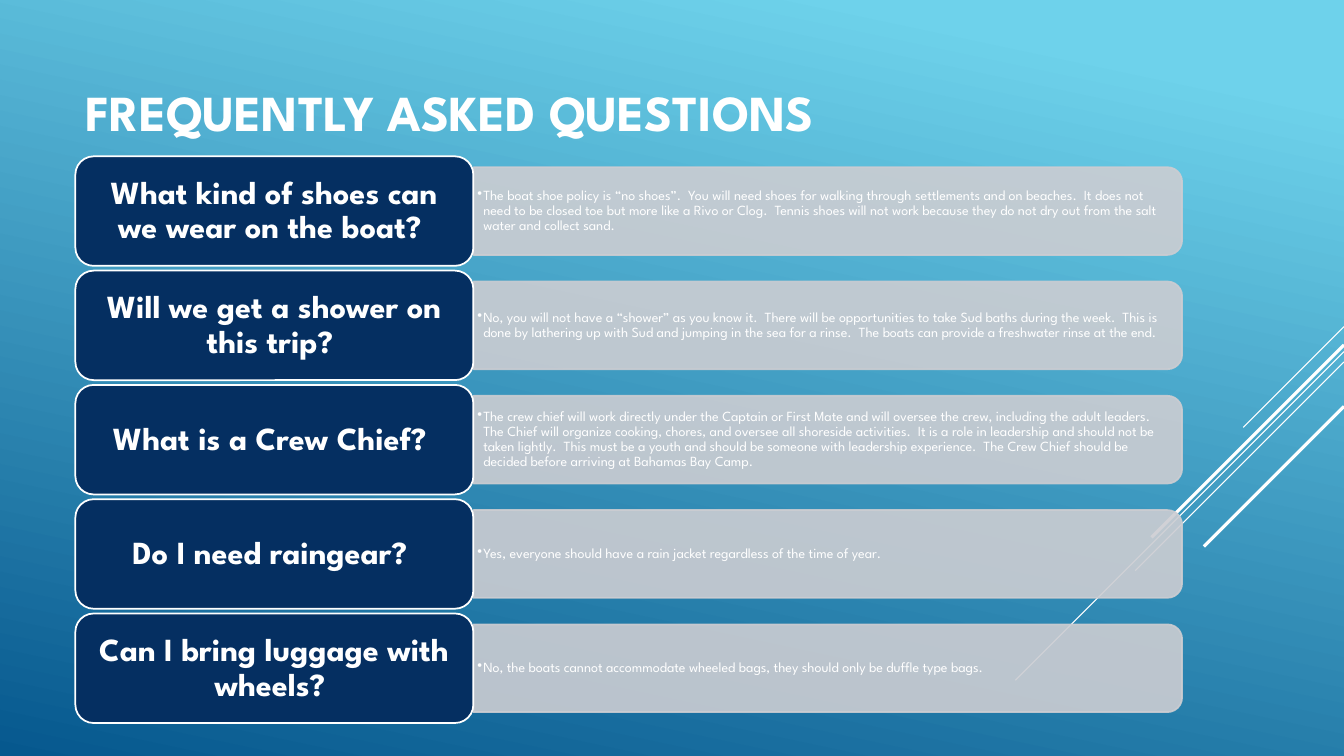
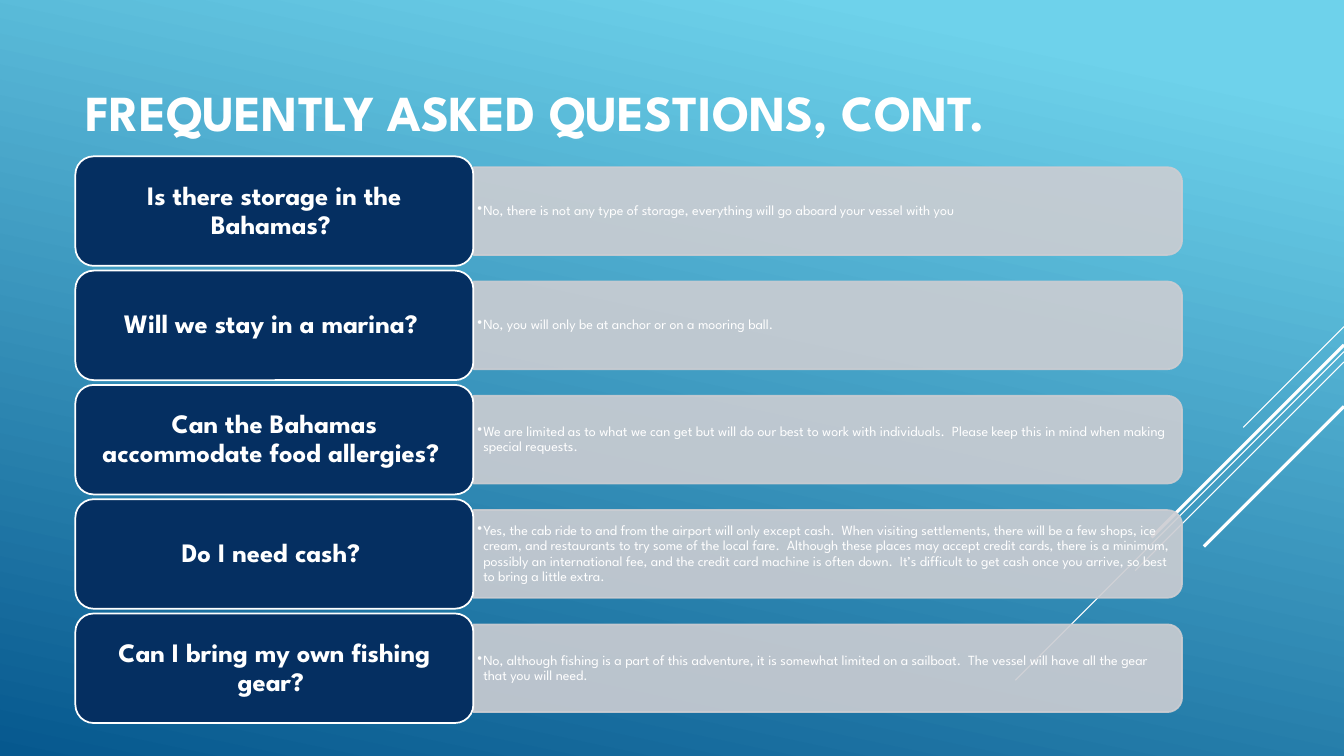
from pptx import Presentation
from pptx.dml.color import RGBColor
from pptx.enum.shapes import MSO_CONNECTOR, MSO_SHAPE
from pptx.enum.text import MSO_ANCHOR, MSO_AUTO_SIZE, PP_ALIGN
from pptx.oxml.ns import qn
from pptx.util import Cm, Pt
from lxml import etree

STRAIGHT = MSO_CONNECTOR.STRAIGHT
ROUNDED = MSO_SHAPE.ROUNDED_RECTANGLE
ROUNDED_TOP = MSO_SHAPE.ROUND_2_SAME_RECTANGLE
MIDDLE = MSO_ANCHOR.MIDDLE
NO_AUTOFIT = MSO_AUTO_SIZE.NONE
LEFT, CENTER = PP_ALIGN.LEFT, PP_ALIGN.CENTER

WHITE = RGBColor(0xFF, 0xFF, 0xFF)
NAVY = RGBColor(0x05, 0x2F, 0x61)
GRAY = RGBColor(0xCC, 0xCD, 0xD2)
SKY = RGBColor(0x6E, 0xD2, 0xEB)
OCEAN = RGBColor(0x06, 0x58, 0x8E)
FONT = "League Spartan"

# Sizes in centimetres
SLIDE_WIDTH, SLIDE_HEIGHT = 33.87, 19.05
MARGIN_LEFT = 1.9
TILE_WIDTH, TILE_HEIGHT = 10.03, 2.76
FIRST_ROW_MIDDLE, ROW_PITCH = 5.32, 2.88
PANEL_LEFT = MARGIN_LEFT + TILE_WIDTH
PANEL_WIDTH, PANEL_HEIGHT = 17.86, 2.21
ANSWER_WIDTH, ANSWER_HEIGHT = 17.75, 1.98

# Diagonals from the right edge: top, run (equal across and down), line width in points
DIAGONALS = [
    (8.23, 2.54, 0.75),
    (8.86, 8.28, 0.75),
    (9.12, 5.26, 0.75),
    (8.69, 4.85, 2.25),
    (10.24, 3.53, 2.25),
]

# Title, question size in points, questions with answers
FAQ_SLIDES = [
    ("FREQUENTLY ASKED QUESTIONS", 23, [
        ("What kind of shoes can we wear on the boat? ",
         "The boat shoe policy is “no shoes”.  You will need shoes for walking through "
         "settlements and on beaches.  It does not need to be closed toe but more like a "
         "Rivo or Clog.  Tennis shoes will not work because they do not dry out from the "
         "salt water and collect sand."),
        ("Will we get a shower on this trip? ",
         "No, you will not have a “shower” as you know it.  There will be opportunities to "
         "take Sud baths during the week.  This is done by lathering up with Sud and jumping "
         "in the sea for a rinse.  The boats can provide a freshwater rinse at the end."),
        ("What is a Crew Chief? ",
         "The crew chief will work directly under the Captain or First Mate and will oversee "
         "the crew, including the adult leaders.  The Chief will organize cooking, chores, "
         "and oversee all shoreside activities.  It is a role in leadership and should not be "
         "taken lightly.  This must be a youth and should be someone with leadership "
         "experience.  The Crew Chief should be decided before arriving at Bahamas Bay Camp."),
        ("Do I need raingear? ",
         "Yes, everyone should have a rain jacket regardless of the time of year."),
        ("Can I bring luggage with wheels? ",
         "No, the boats cannot accommodate wheeled bags, they should only be duffle type "
         "bags."),
    ]),
    ("FREQUENTLY ASKED QUESTIONS, CONT.", 19, [
        ("Is there storage in the Bahamas? ",
         "No, there is not any type of storage, everything will go aboard your vessel with "
         "you"),
        ("Will we stay in a marina? ",
         "No, you will only be at anchor or on a mooring ball."),
        ("Can the Bahamas accommodate food allergies? ",
         "We are limited as to what we can get but will do our best to work with "
         "individuals.  Please keep this in mind when making special requests."),
        ("Do I need cash? ",
         "Yes, the cab ride to and from the airport will only except cash.  When visiting "
         "settlements, there will be a few shops, ice cream, and restaurants to try some of "
         "the local fare.  Although these places may accept credit cards, there is a minimum, "
         "possibly an international fee, and the credit card machine is often down.  It’s "
         "difficult to get cash once you arrive, so best to bring a little extra."),
        ("Can I bring my own fishing gear? ",
         "No, although fishing is a part of this adventure, it is somewhat limited on a "
         "sailboat.  The vessel will have all the gear that you will need."),
    ]),
]


def write_text(shape, text, size, bold, alignment, margins):
    """Fill the shape with one white paragraph; margins are (sides, top and bottom) in cm."""
    side, edge = margins
    frame_format = {
        "word_wrap": True, "auto_size": NO_AUTOFIT, "vertical_anchor": MIDDLE,
        "margin_left": Cm(side), "margin_right": Cm(side),
        "margin_top": Cm(edge), "margin_bottom": Cm(edge),
    }
    for name, value in frame_format.items():
        setattr(shape.text_frame, name, value)
    paragraph = shape.text_frame.paragraphs[0]
    paragraph.alignment = alignment
    paragraph.line_spacing = 0.9
    run = paragraph.add_run()
    run.text = text
    for name, value in {"name": FONT, "size": Pt(size), "bold": bold}.items():
        setattr(run.font, name, value)
    run.font.color.rgb = WHITE
    return paragraph


def add_block(slide, kind, box, fill, line):
    shape = slide.shapes.add_shape(kind, *[Cm(length) for length in box])
    shape.shadow.inherit = False
    shape.fill.solid()
    shape.fill.fore_color.rgb = fill
    shape.line.color.rgb = line
    shape.line.width = Pt(1.25)
    return shape


presentation = Presentation()
presentation.slide_width = Cm(SLIDE_WIDTH)
presentation.slide_height = Cm(SLIDE_HEIGHT)
layout = presentation.slide_layouts[5]  # Title Only

background = layout.background.fill
background.gradient()
background.gradient_angle = 258
for stop, (position, color) in zip(background.gradient_stops, [(0.1, SKY), (1, OCEAN)]):
    stop.position = position
    stop.color.rgb = color

slides = [presentation.slides.add_slide(layout) for _ in FAQ_SLIDES]

# Connectors can only be made on a slide, so each is then moved to the shared layout
for top, run_length, width in DIAGONALS:
    diagonal = slides[0].shapes.add_connector(
        STRAIGHT, Cm(SLIDE_WIDTH), Cm(top),
        Cm(SLIDE_WIDTH - run_length), Cm(top + run_length))
    diagonal.line.color.rgb = WHITE
    diagonal.line.width = Pt(width)
    etree.SubElement(diagonal.element.spPr, qn("a:effectLst"))
    layout.shapes.element.append(diagonal.element)

for slide, (title_text, question_size, entries) in zip(slides, FAQ_SLIDES):
    title = slide.shapes.title
    title_box = {"left": MARGIN_LEFT, "top": 0.81, "width": 25, "height": 4.19}
    for name, value in title_box.items():
        setattr(title, name, Cm(value))
    write_text(title, title_text, 36, True, LEFT, (0.25, 0.13))

    for row, (question, answer) in enumerate(entries):
        middle = FIRST_ROW_MIDDLE + row * ROW_PITCH

        # Upright shape turned a quarter, so its rounded top faces right
        panel_box = (PANEL_LEFT + (PANEL_WIDTH - PANEL_HEIGHT) / 2,
                     middle - PANEL_WIDTH / 2, PANEL_HEIGHT, PANEL_WIDTH)
        panel = add_block(slide, ROUNDED_TOP, panel_box, GRAY, GRAY)
        panel.rotation = 90
        for color in panel.element.spPr.iter(qn("a:srgbClr")):
            etree.SubElement(color, qn("a:alpha"), val="90000")

        answer_box = slide.shapes.add_textbox(
            Cm(PANEL_LEFT), Cm(middle - ANSWER_HEIGHT / 2),
            Cm(ANSWER_WIDTH), Cm(ANSWER_HEIGHT))
        paragraph = write_text(answer_box, answer, 10, False, LEFT, (0.1, 0.05))
        properties = paragraph._p.get_or_add_pPr()
        properties.set("marL", str(Cm(0.15)))
        properties.set("indent", str(Cm(-0.15)))
        etree.SubElement(properties, qn("a:buChar"), char="•")

        tile_box = (MARGIN_LEFT, middle - TILE_HEIGHT / 2, TILE_WIDTH, TILE_HEIGHT)
        tile = add_block(slide, ROUNDED, tile_box, NAVY, WHITE)
        write_text(tile, question, question_size, True, CENTER, (0.38, 0.25))

presentation.save("out.pptx")
